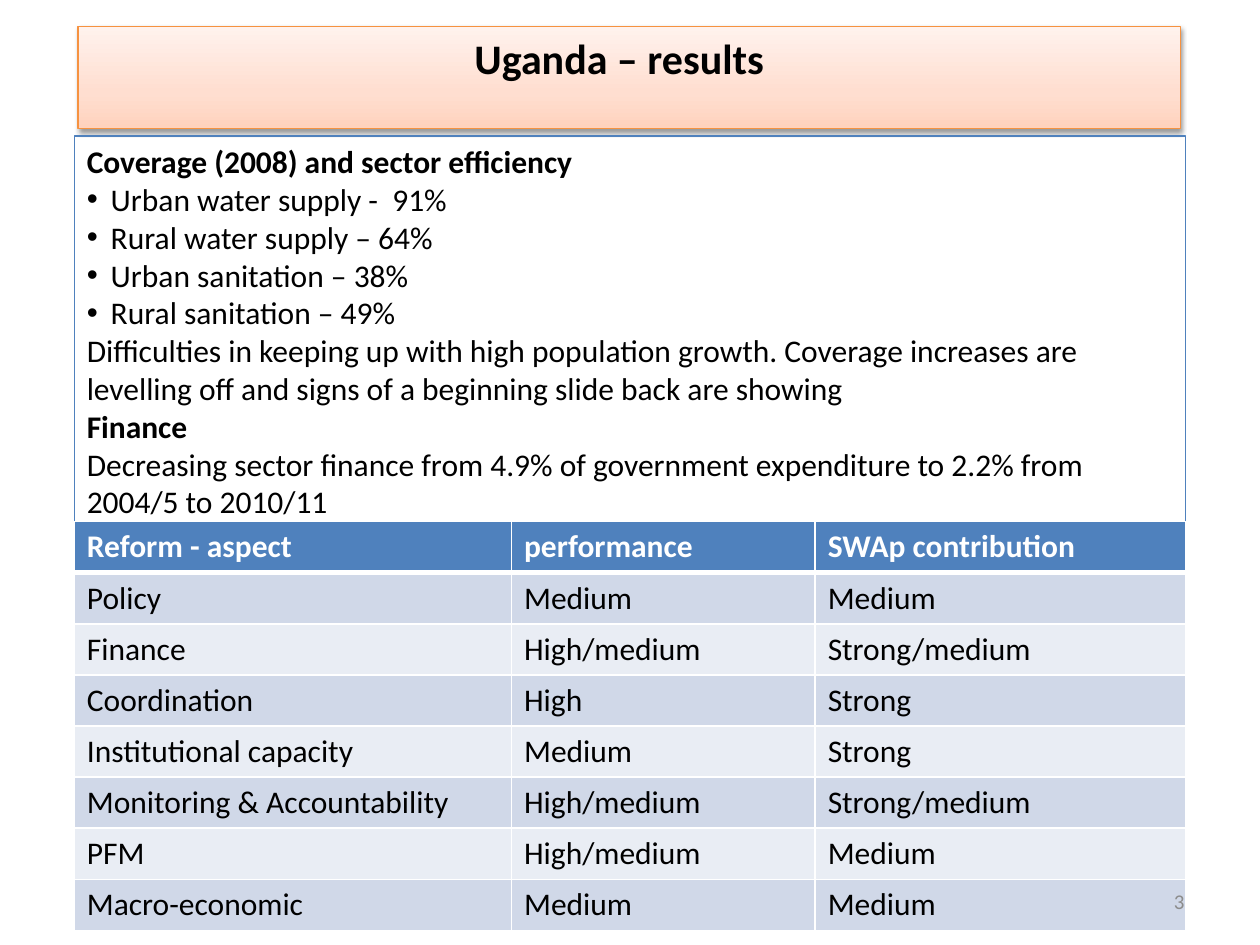
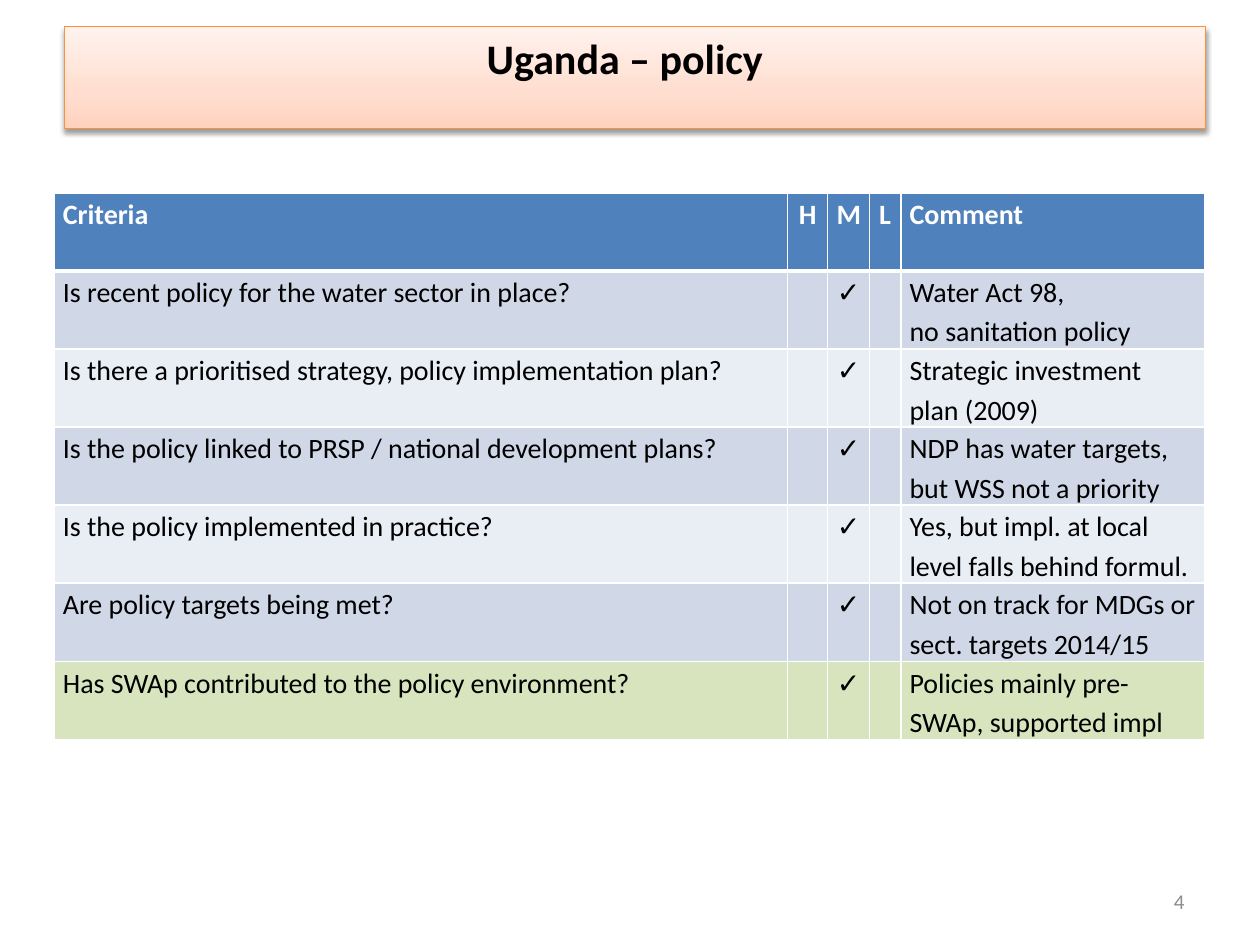
from copy import deepcopy

from lxml import etree
from pptx import Presentation
from pptx.dml.color import RGBColor
from pptx.enum.shapes import MSO_SHAPE
from pptx.enum.text import MSO_ANCHOR, PP_ALIGN
from pptx.oxml.ns import qn
from pptx.util import Inches, Pt

RECT = MSO_SHAPE.RECTANGLE
TOP, MIDDLE = MSO_ANCHOR.TOP, MSO_ANCHOR.MIDDLE
LEFT, CENTER, RIGHT = PP_ALIGN.LEFT, PP_ALIGN.CENTER, PP_ALIGN.RIGHT

# Slide grid: 100 columns by 75 rows of square units
WIDE, HIGH = Inches(10), Inches(7.5)
UNIT = WIDE / 100
FONT = "Calibri"
COLORS = {
    "ink": "000000", "paper": "FFFFFF", "gray": "8C8C8C",
    "blue": "4F81BD", "dark": "D0D8E8", "light": "E9EDF4",
    "green": "D7E4BD", "edge": "F69240",
}
GLOW = ((0, "FFD2BD"), (0.35, "FFDED0"), (1, "FFF2ED"))

FACTS = (
    ("Coverage (2008) and sector efficiency", {"bold": True}),
    ("Urban water supply -  91%\nRural water supply – 64%\n"
     "Urban sanitation – 38%\nRural sanitation – 49%", {"bullet": True}),
    ("Difficulties in keeping up with high population growth. Coverage "
     "increases are levelling off and signs of a beginning slide back are "
     "showing", {}),
    ("Finance", {"bold": True}),
    ("Decreasing sector finance from 4.9% of government expenditure to 2.2% "
     "from 2004/5 to 2010/11", {}),
)
REFORMS = (
    ("Reform - aspect", "performance", "SWAp contribution"),
    ("Policy", "Medium", "Medium"),
    ("Finance", "High/medium", "Strong/medium"),
    ("Coordination", "High", "Strong"),
    ("Institutional capacity", "Medium", "Strong"),
    ("Monitoring & Accountability", "High/medium", "Strong/medium"),
    ("PFM", "High/medium", "Medium"),
    ("Macro-economic", "Medium", "Medium"),
)
# Every criterion is rated medium
RATINGS = (
    ("Is recent policy for the water sector in place?",
     "Water Act 98,\nno sanitation policy"),
    ("Is there a prioritised strategy, policy implementation plan?",
     "Strategic investment plan (2009)"),
    ("Is the policy linked to PRSP / national development plans?",
     "NDP has water targets, but WSS not a priority"),
    ("Is the policy implemented in practice?",
     "Yes, but impl. at local level falls behind formul."),
    ("Are policy targets being met?",
     "Not on track for MDGs or sect. targets 2014/15"),
    ("Has SWAp contributed to the policy environment?",
     "Policies mainly pre-SWAp, supported impl"),
)
POLICY = [("Criteria", "H", "M", "L", "Comment")]
POLICY += [(ask, "", "✓", "", note) for ask, note in RATINGS]


def units(*sizes):
    return [round(size * UNIT) for size in sizes]


def tint(name):
    return RGBColor.from_string(COLORS[name])


def write(frame, text, size=18, color="ink", bold=False, align=LEFT,
          space=None, bullet=False):
    """Add one paragraph per line of text, filling an empty first one."""
    for line in text.split("\n"):
        para = frame.paragraphs[0]
        if para.runs:
            para = frame.add_paragraph()
        para.alignment = align
        if space:
            para.line_spacing = space
        if bullet:
            props = para._p.get_or_add_pPr()
            hang = units(1.9)[0]
            props.set("marL", str(hang))
            props.set("indent", str(-hang))
            etree.SubElement(props, qn("a:buFont"), typeface="Arial")
            etree.SubElement(props, qn("a:buChar"), char="•")
        run = para.add_run()
        run.text = line
        font = run.font
        font.name, font.size, font.bold = FONT, Pt(size), bold
        font.color.rgb = tint(color)


def panel(slide, spot, edge):
    """Outlined rectangle without fill, text at its top."""
    shape = slide.shapes.add_shape(RECT, *units(*spot))
    shape.shadow.inherit = False
    shape.fill.background()
    shape.line.color.rgb = tint(edge)
    shape.line.width = Pt(0.75)
    shape.text_frame.word_wrap = True
    shape.text_frame.vertical_anchor = TOP
    return shape


def banner(slide, text, left, width):
    shape = panel(slide, (left, 2.1, width, 8.1), "edge")
    props = shape._element.spPr
    # Gradient from bottom to top
    shape.fill.gradient()
    shape.fill.gradient_angle = 90
    stops = props.find(".//" + qn("a:gsLst"))
    stops.append(deepcopy(stops[-1]))
    for stop, (pos, shade) in zip(shape.fill.gradient_stops, GLOW):
        stop.position = pos
        stop.color.rgb = RGBColor.from_string(shade)
    # Soft shadow below
    drop = etree.SubElement(
        props.find(qn("a:effectLst")), qn("a:outerShdw"),
        blurRad=str(Pt(3.1)), dist=str(Pt(1.6)), dir="5400000",
        rotWithShape="0")
    black = etree.SubElement(drop, qn("a:srgbClr"), val=COLORS["ink"])
    etree.SubElement(black, qn("a:alpha"), val="38000")
    # A wider right inset sets the title slightly left of centre
    shape.text_frame.margin_right = units(2.6)[0]
    write(shape.text_frame, text, size=24, bold=True, align=CENTER)


def border(cell, row):
    """White cell lines, thicker between header and body."""
    props = cell._tc.get_or_add_tcPr()
    thick = {0: "B", 1: "T"}.get(row)
    for spot, side in enumerate("LRTB"):
        line = etree.Element(qn("a:ln" + side),
                             w=str(Pt(3 if side == thick else 1)))
        fill = etree.SubElement(line, qn("a:solidFill"))
        etree.SubElement(fill, qn("a:srgbClr"), val=COLORS["paper"])
        props.insert(spot, line)


def grid(slide, rows, left, top, cols, step, middle=(), last=None,
         inset=None, **style):
    frame = slide.shapes.add_table(
        len(rows), len(cols),
        *units(left, top, sum(cols), step * len(rows)))
    table = frame.table
    for col, width in zip(table.columns, units(*cols)):
        col.width = width
    for r, texts in enumerate(rows):
        table.rows[r].height = units(step)[0]
        shade = "blue" if r == 0 else "dark" if r % 2 else "light"
        if last and r == len(rows) - 1:
            shade = last
        for c, text in enumerate(texts):
            cell = table.cell(r, c)
            cell.fill.solid()
            cell.fill.fore_color.rgb = tint(shade)
            border(cell, r)
            if inset:
                cell.margin_left = cell.margin_right = units(inset)[0]
                cell.margin_top = cell.margin_bottom = 0
            if text:
                write(cell.text_frame, text, bold=r == 0,
                      color="ink" if r else "paper",
                      align=CENTER if c in middle else LEFT, **style)


def number(slide, text):
    box = slide.shapes.add_textbox(*units(71.7, 69.5, 23.3, 4))
    box.text_frame.word_wrap = True
    box.text_frame.vertical_anchor = MIDDLE
    write(box.text_frame, text, size=12, color="gray", align=RIGHT)


def results(slide):
    banner(slide, "Uganda – results", 6.2, 87.5)
    facts = panel(slide, (5.9, 10.8, 88.2, 31.3), "blue")
    for text, style in FACTS:
        write(facts.text_frame, text, **style)
    grid(slide, REFORMS, 5.9, 41.4, (34.7, 24.1, 29.4), 4.05)
    number(slide, "3")


def policy(slide):
    grid(slide, POLICY, 4.3, 15.3, (58.2, 3.2, 3.3, 2.5, 24.1), 6.2,
         middle=(1, 2, 3), last="green", inset=0.7, size=16, space=1.15)
    banner(slide, "Uganda – policy", 5.1, 90.6)
    number(slide, "4")


def main():
    deck = Presentation()
    deck.slide_width, deck.slide_height = WIDE, HIGH
    for build in (results, policy):
        build(deck.slides.add_slide(deck.slide_layouts[6]))
    deck.save("out.pptx")


if __name__ == "__main__":
    main()
